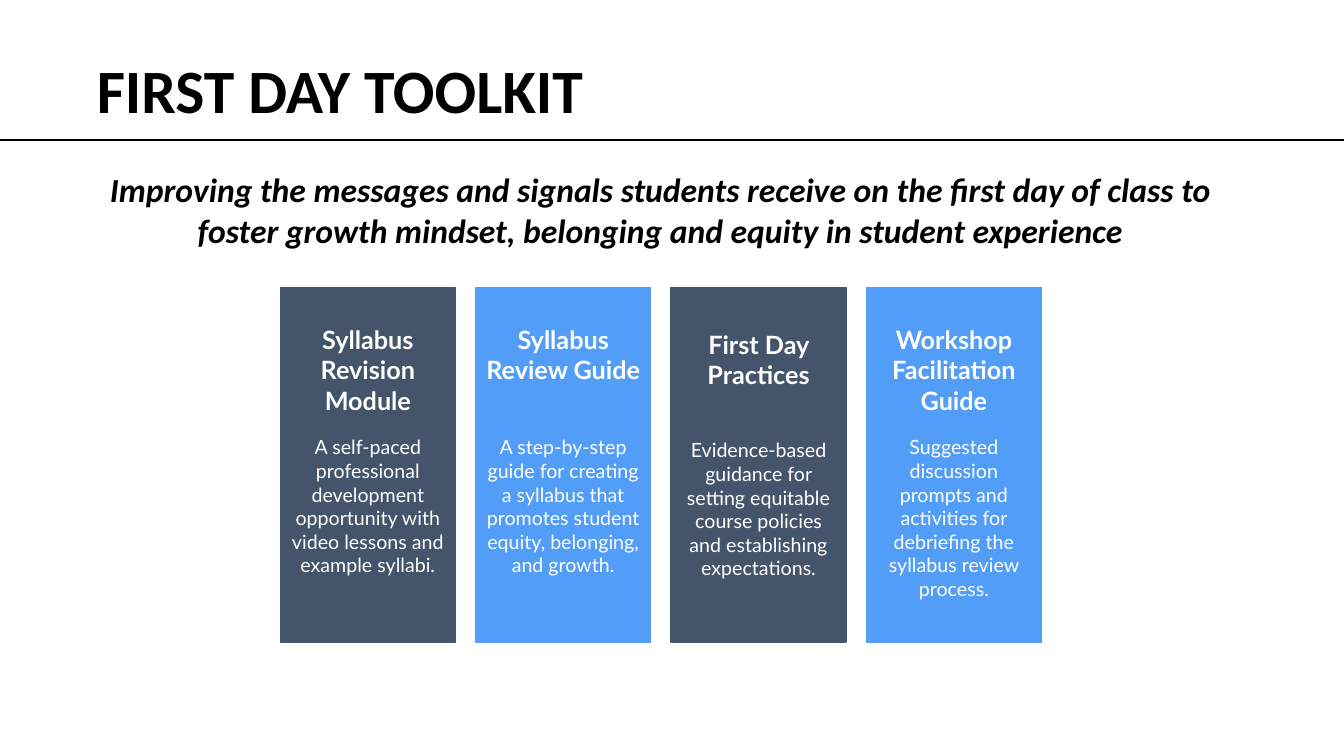
import pptx
import pptx.util
import pptx.dml.color
import pptx.enum.text
import pptx.enum.shapes
import pptx.oxml.ns
import lxml.etree
from dataclasses import dataclass

INCH = pptx.util.Inches
ALIGN = pptx.enum.text.PP_ALIGN
TOP = pptx.enum.text.MSO_ANCHOR.TOP


@dataclass(frozen=True)
class Theme:
    black: str = "000000"
    white: str = "FFFFFF"
    fills: tuple = ("44546A", "529DF7")
    head: str = "Calibri"
    body: str = "Lato"
    title: int = 44
    lead: int = 24
    name: int = 18
    note: int = 14


THEME = Theme()
WIDE, HIGH = 13.33, 7.5

# Card name, note, and drop of each from the usual line
CARDS = [
    ("Syllabus Revision Module",
     "A self-paced professional development opportunity with video lessons "
     "and example syllabi.", 0, 0),
    ("Syllabus Review Guide",
     "A step-by-step guide for creating a syllabus that promotes student "
     "equity, belonging, and growth.", 0, 0),
    ("First Day Practices",
     "Evidence-based guidance for setting equitable course policies and "
     "establishing expectations.", 0.05, 0.03),
    ("Workshop Facilitation Guide",
     "Suggested discussion prompts and activities for debriefing the "
     "syllabus review process.", 0, 0),
]


def tint(hue):
    return pptx.dml.color.RGBColor.from_string(hue)


def write(shape, text, hue, align, inset=0.05, **look):
    """Fill a shape with one paragraph of styled text."""
    frame = shape.text_frame
    frame.text = text
    form = {"word_wrap": True, "vertical_anchor": TOP,
            "auto_size": pptx.enum.text.MSO_AUTO_SIZE.NONE,
            "margin_left": INCH(0.1), "margin_right": INCH(0.1),
            "margin_top": INCH(inset), "margin_bottom": INCH(inset)}
    for key, value in form.items():
        setattr(frame, key, value)
    para = frame.paragraphs[0]
    para.alignment = align
    font = para.runs[0].font
    for key, value in look.items():
        setattr(font, key, value)
    font.color.rgb = tint(hue)
    return para


def label(slide, box, text, hue, **look):
    """Add a centred text box."""
    shape = slide.shapes.add_textbox(*map(INCH, box))
    write(shape, text, hue, ALIGN.CENTER, **look)


def header(slide, box):
    """Title above a rule that spans the slide."""
    left, top, width, height = box
    title = slide.shapes.title
    place = {"left": left, "top": top, "width": width, "height": height}
    for key, value in place.items():
        setattr(title, key, INCH(value))
    para = write(title, "FIRST DAY TOOLKIT", THEME.black, ALIGN.LEFT,
                 inset=0.1, name=THEME.head,
                 size=pptx.util.Pt(THEME.title), bold=True)
    para.line_spacing = 0.9

    level = INCH(top + height - 0.09)
    rule = slide.shapes.add_connector(
        pptx.enum.shapes.MSO_CONNECTOR.STRAIGHT, 0, level, INCH(WIDE), level)
    rule.line.color.rgb = tint(THEME.black)
    rule.line.width = pptx.util.Pt(1.5)
    props = rule.element.find(pptx.oxml.ns.qn("p:spPr"))
    lxml.etree.SubElement(props, pptx.oxml.ns.qn("a:effectLst"))


def lead(slide, box):
    """Statement of purpose."""
    label(slide, box,
          "Improving the messages and signals students receive on the first "
          "day of class to foster growth mindset, belonging and equity in "
          "student experience", THEME.black, name=THEME.head,
          size=pptx.util.Pt(THEME.lead), bold=True, italic=True)


def card(slide, box, data, hue):
    """One coloured panel with its name and note."""
    left, top, width, height = box
    name, note, fall, dip = data
    panel = slide.shapes.add_shape(
        pptx.enum.shapes.MSO_SHAPE.RECTANGLE, *map(INCH, box))
    panel.shadow.inherit = False
    panel.fill.solid()
    panel.fill.fore_color.rgb = tint(hue)
    panel.line.color.rgb = tint(hue)
    panel.line.width = pptx.util.Pt(1)

    label(slide, (left, top + 0.32 + fall, width, 1.01), name, THEME.white,
          name=THEME.body, size=pptx.util.Pt(THEME.name), bold=True)
    label(slide, (left, top + 1.42 + dip, width, height / 2), note,
          THEME.white, name=THEME.body, size=pptx.util.Pt(THEME.note))


def cards(slide, box, gap=0.2):
    """Row of equal panels in alternating colours."""
    left, top, width, height = box
    count = len(CARDS)
    wide = (width - gap * (count - 1)) / count
    for i, data in enumerate(CARDS):
        card(slide, (left + i * (wide + gap), top, wide, height), data,
             THEME.fills[i % len(THEME.fills)])


def main():
    deck = pptx.Presentation()
    deck.slide_width, deck.slide_height = INCH(WIDE), INCH(HIGH)
    slide = deck.slides.add_slide(deck.slide_layouts.get_by_name("Title Only"))
    header(slide, (0.86, 0.5, 7.49, 0.98))
    lead(slide, (0.86, 1.63, 11.38, 0.91))
    cards(slide, (2.78, 2.85, 7.55, 3.52))
    deck.save("out.pptx")


if __name__ == "__main__":
    main()
